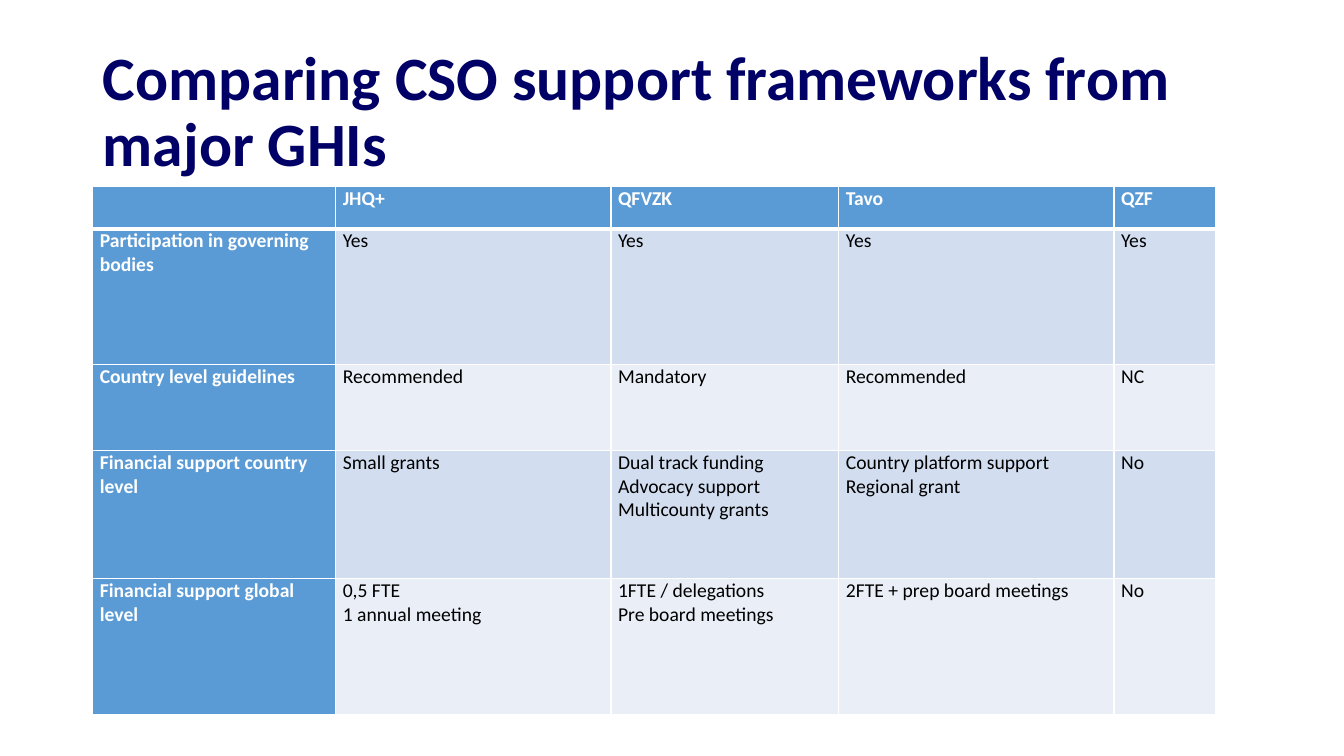
from lxml import etree
from pptx import Presentation
from pptx import util as u
from pptx.dml.color import RGBColor
from pptx.enum import text
from pptx.oxml import ns

NAVY = RGBColor(0x00, 0x00, 0x66)
BLUE = RGBColor(0x5B, 0x9B, 0xD5)
BANDS = (RGBColor(0xD2, 0xDE, 0xEF), RGBColor(0xEA, 0xEF, 0xF7))
WHITE = RGBColor(0xFF, 0xFF, 0xFF)
BLACK = RGBColor(0x00, 0x00, 0x00)
FONT = "Calibri"

COLUMN_WIDTHS = (241, 273, 226, 273, 101)
ROW_HEIGHTS = (42, 135, 85, 127, 135)
FRAMEWORKS = (
    ("", "JHQ+", "QFVZK", "Tavo", "QZF"),
    ("Participation in governing bodies", "Yes", "Yes", "Yes", "Yes"),
    ("Country level guidelines", "Recommended", "Mandatory", "Recommended", "NC"),
    ("Financial support country level", "Small grants",
     "Dual track funding Advocacy support\nMulticounty grants",
     "Country platform support\nRegional grant", "No"),
    ("Financial support global level", "0,5 FTE\n1 annual meeting",
     "1FTE / delegations\nPre board meetings", "2FTE + prep board meetings", "No"),
)


def px(length):
    return u.Emu(length * 9144)


def add_run(paragraph, wording, size, color, bold):
    run = paragraph.add_run()
    run.text = wording
    run.font.name = FONT
    run.font.size = u.Pt(size)
    run.font.bold = bold
    run.font.color.rgb = color


def fill_title(title, wording):
    title.left, title.top, title.width, title.height = map(px, (92, 40, 1150, 145))
    frame = title.text_frame
    frame.word_wrap = True
    frame.auto_size = text.MSO_AUTO_SIZE.NONE
    frame.vertical_anchor = text.MSO_ANCHOR.MIDDLE
    paragraph = frame.paragraphs[0]
    paragraph.alignment = text.PP_ALIGN.LEFT
    paragraph.line_spacing = 0.9
    add_run(paragraph, wording, 44, NAVY, True)


def set_border(cell, side, points):
    properties = cell._tc.get_or_add_tcPr()
    line = etree.SubElement(properties, ns.qn(f"a:ln{side}"), w=str(u.Pt(points)))
    solid = etree.SubElement(line, ns.qn("a:solidFill"))
    etree.SubElement(solid, ns.qn("a:srgbClr"), val=str(WHITE))


def fill_cell(cell, wording, row, column):
    heading = row == 0 or column == 0
    cell.margin_left = cell.margin_right = px(7)
    cell.margin_top = cell.margin_bottom = 0
    for side in "LRTB":
        thick = (row, side) in ((0, "B"), (1, "T"))
        set_border(cell, side, 3 if thick else 1)
    cell.fill.solid()
    cell.fill.fore_color.rgb = BLUE if heading else BANDS[(row - 1) % 2]
    if not wording:
        return
    frame = cell.text_frame
    for index, entry in enumerate(wording.split("\n")):
        paragraph = frame.add_paragraph() if index else frame.paragraphs[0]
        add_run(paragraph, entry, 14, WHITE if heading else BLACK, heading)


def add_comparison(slide):
    comparison = slide.shapes.add_table(
        len(ROW_HEIGHTS), len(COLUMN_WIDTHS), px(92), px(185),
        px(sum(COLUMN_WIDTHS)), px(sum(ROW_HEIGHTS))).table
    comparison.first_col = True
    for column, width in zip(comparison.columns, COLUMN_WIDTHS):
        column.width = px(width)
    for row, height in zip(comparison.rows, ROW_HEIGHTS):
        row.height = px(height)
    for row, entries in enumerate(FRAMEWORKS):
        for column, wording in enumerate(entries):
            fill_cell(comparison.cell(row, column), wording, row, column)


def main():
    deck = Presentation()
    deck.slide_width, deck.slide_height = px(1333), px(750)
    slide = deck.slides.add_slide(deck.slide_layouts[5])
    fill_title(slide.shapes.title, "Comparing CSO support frameworks from major GHIs")
    add_comparison(slide)
    deck.save("out.pptx")


if __name__ == "__main__":
    main()
